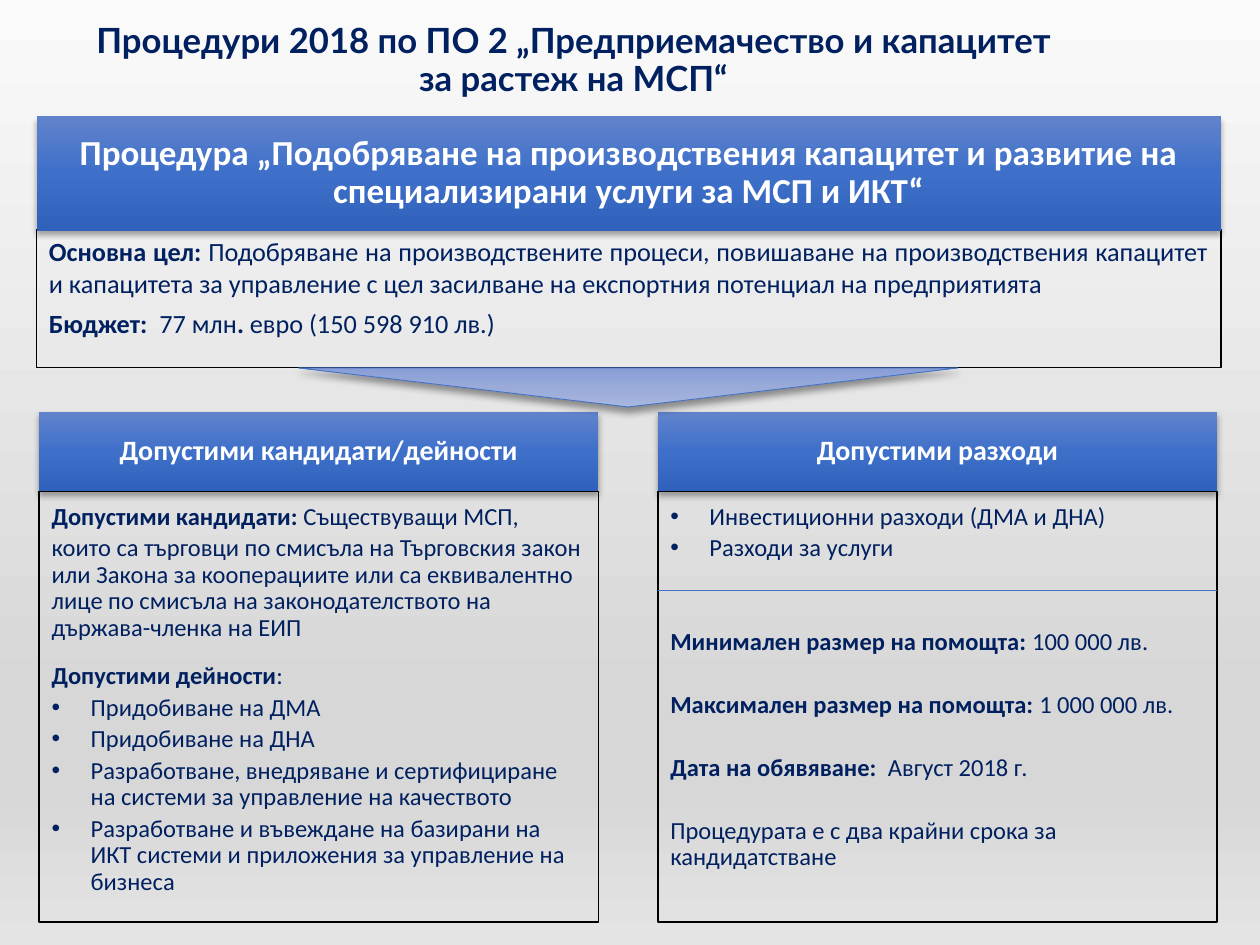
from dataclasses import dataclass

from lxml.etree import SubElement
from pptx import Presentation
from pptx.dml.color import RGBColor
from pptx.enum.shapes import MSO_CONNECTOR, MSO_SHAPE
from pptx.enum.text import MSO_ANCHOR, MSO_AUTO_SIZE, PP_ALIGN
from pptx.oxml.ns import qn
from pptx.util import Inches, Pt


@dataclass(frozen=True)
class Theme:
    navy: str = "002060"
    white: str = "FFFFFF"
    black: str = "000000"
    accent: str = "4472C4"
    page: tuple = ((0, "FAFAFA"), (74, "D7D7D7"), (83, "D7D7D7"), (100, "E4E4E4"))
    banner: tuple = ((0, "6183CB"), (50, "3E70CA"), (100, "3062BB"))
    arrow: tuple = ((0, "A8B7DF"), (50, "9AABD9"), (100, "889ED7"))
    body_font: str = "Calibri"
    title_font: str = "Lato"
    title: float = 19.8
    banner_size: int = 20
    heading: int = 16
    goal: int = 15
    body: int = 14


T = Theme()


def write(sp, paragraphs, size, color=T.navy, font=T.body_font, align=PP_ALIGN.LEFT,
          anchor=MSO_ANCHOR.TOP, spacing=0.9, inset=0.1):
    """Each paragraph is (space before, bulleted, runs); each run is (text, bold)."""
    tf = sp.text_frame
    tf.word_wrap = True
    tf.auto_size = MSO_AUTO_SIZE.NONE
    tf.vertical_anchor = anchor
    tf.margin_left = tf.margin_right = Inches(0.1)
    tf.margin_top = tf.margin_bottom = Inches(inset)
    for i, (before, bulleted, runs) in enumerate(paragraphs):
        p = tf.add_paragraph() if i else tf.paragraphs[0]
        p.alignment = align
        p.line_spacing = spacing
        p.space_before = Pt(before)
        pPr = p._p.get_or_add_pPr()
        indent = Inches(0.31) if bulleted else 0
        pPr.set("marL", str(indent))
        pPr.set("indent", str(-indent))
        if bulleted:
            SubElement(pPr, qn("a:buFont"), typeface="Arial")
            SubElement(pPr, qn("a:buChar"), char="•")
        else:
            SubElement(pPr, qn("a:buNone"))
        for text, bold in runs:
            r = p.add_run()
            r.text = text
            r.font.name = font
            r.font.size = Pt(size)
            r.font.bold = bold
            r.font.color.rgb = RGBColor.from_string(color)


def paint(target, root, stops, shadow=None):
    """Fill with a downward gradient; shadow is (opacity %, blur pt, distance pt)."""
    target.fill.gradient()
    target.fill.gradient_angle = 270
    gs_list = next(root.iter(qn("a:gsLst")))
    for gs in list(gs_list):
        gs_list.remove(gs)
    for pos, color in stops:
        gs = SubElement(gs_list, qn("a:gs"), pos=str(pos * 1000))
        SubElement(gs, qn("a:srgbClr"), val=color)
    if shadow:
        opacity, blur, dist = shadow
        target.shadow.inherit = False
        outer = SubElement(next(root.iter(qn("a:effectLst"))), qn("a:outerShdw"),
                           blurRad=str(Pt(blur)), dist=str(Pt(dist)),
                           dir="5400000", rotWithShape="0")
        clr = SubElement(outer, qn("a:srgbClr"), val=T.black)
        SubElement(clr, qn("a:alpha"), val=str(opacity * 1000))


prs = Presentation()
prs.slide_width, prs.slide_height = Inches(10), Inches(7.5)
s = prs.slides.add_slide(prs.slide_layouts.get_by_name("Comparison"))
paint(s.background, s._element, T.page)
banner_shadow = (32, 3.5, 2.2)

# Title
title = s.shapes.title
title.left, title.top, title.width, title.height = map(Inches, (0.55, 0.14, 8, 0.57))
write(title, [(0, False, [("Процедури 2018 по ПО 2 „Предприемачество и капацитет за растеж на МСП“", True)])],
      T.title, font=T.title_font, align=PP_ALIGN.CENTER, inset=0.05)

# Goal and budget
goal = s.shapes.add_textbox(Inches(0.29), Inches(1.82), Inches(9.4), Inches(1.1))
goal.line.color.rgb = RGBColor.from_string(T.black)
goal.line.width = Pt(0.75)
write(goal, [
    (0, False, [("Основна цел: ", True),
                ("Подобряване на производствените процеси, повишаване на производствения "
                 "капацитет и капацитета за управление с цел засилване на експортния "
                 "потенциал на предприятията", False)]),
    (5.25, False, [("Бюджет:  ", True), ("77 млн", False), (".", True),
                   (" евро (150 598 910 лв.)", False)]),
], T.goal, align=PP_ALIGN.JUSTIFY, spacing=1.0, inset=0.05)

# Procedure banner
banner = s.shapes.add_shape(MSO_SHAPE.RECTANGLE, Inches(0.29), Inches(0.92), Inches(9.4), Inches(0.91))
paint(banner, banner._element, T.banner, banner_shadow)
banner.line.fill.background()
write(banner, [(0, False, [("Процедура „Подобряване на производствения капацитет и развитие на "
                            "специализирани услуги за МСП и ИКТ“", True)])],
      T.banner_size, T.white, align=PP_ALIGN.CENTER, anchor=MSO_ANCHOR.MIDDLE)

# Two columns: heading over details
candidates = [
    (0, False, [("Допустими кандидати: ", True), ("Съществуващи МСП,", False)]),
    (2.8, False, [("които са търговци по смисъла на Търговския закон или Закона за кооперациите "
                   "или са еквивалентно лице по смисъла на законодателството на "
                   "държава-членка на ЕИП", False)]),
    (12.8, False, [("Допустими дейности", True), (":", False)]),
] + [(2.8, True, [(text, False)]) for text in (
    "Придобиване на ДМА",
    "Придобиване на ДНА",
    "Разработване, внедряване и сертифициране на системи за управление на качеството",
    "Разработване и въвеждане на базирани на ИКТ системи и приложения за управление на бизнеса",
)]
costs = [
    (0, True, [("Инвестиционни разходи (ДМА и ДНА)", False)]),
    (2.8, True, [("Разходи за услуги", False)]),
    (38.6, False, [("Минимален размер на помощта: ", True), ("100 000 лв.", False)]),
    (20.8, False, [("Максимален размер на помощта: ", True), ("1 000 000 лв.", False)]),
    (20.8, False, [("Дата на обявяване:  ", True), ("Август 2018 г.", False)]),
    (20.8, False, [("Процедурата е с два крайни срока за кандидатстване", False)]),
]
columns = [
    (0.31, 1, "Допустими кандидати/дейности", candidates),
    (5.22, 3, "Допустими разходи", costs),
]
for left, idx, heading, details in columns:
    head, body = s.placeholders[idx], s.placeholders[idx + 1]
    for sp, top, height in ((body, 3.9, 3.42), (head, 3.27, 0.63)):
        sp.left, sp.top, sp.width, sp.height = map(Inches, (left, top, 4.44, height))
    body.line.color.rgb = RGBColor.from_string(T.black)
    body.line.width = Pt(1)
    write(body, details, T.body)
    paint(head, head._element, T.banner, banner_shadow)
    write(head, [(0, False, [(heading, True)])], T.heading, T.white,
          align=PP_ALIGN.CENTER, anchor=MSO_ANCHOR.MIDDLE)

# Downward arrow between the banner block and the columns
arrow = s.shapes.add_shape(MSO_SHAPE.ISOSCELES_TRIANGLE, Inches(2.37), Inches(2.92), Inches(5.23), Inches(0.31))
arrow.rotation = 180
paint(arrow, arrow._element, T.arrow, (40, 4, 3))
arrow.line.color.rgb = RGBColor.from_string(T.accent)
arrow.line.width = Pt(0.5)

# Divider in the costs column
divider = s.shapes.add_connector(MSO_CONNECTOR.STRAIGHT, Inches(5.22), Inches(4.69), Inches(9.66), Inches(4.69))
divider.line.color.rgb = RGBColor.from_string(T.accent)
divider.line.width = Pt(0.5)
SubElement(divider._element.spPr, qn("a:effectLst"))

prs.save("out.pptx")
